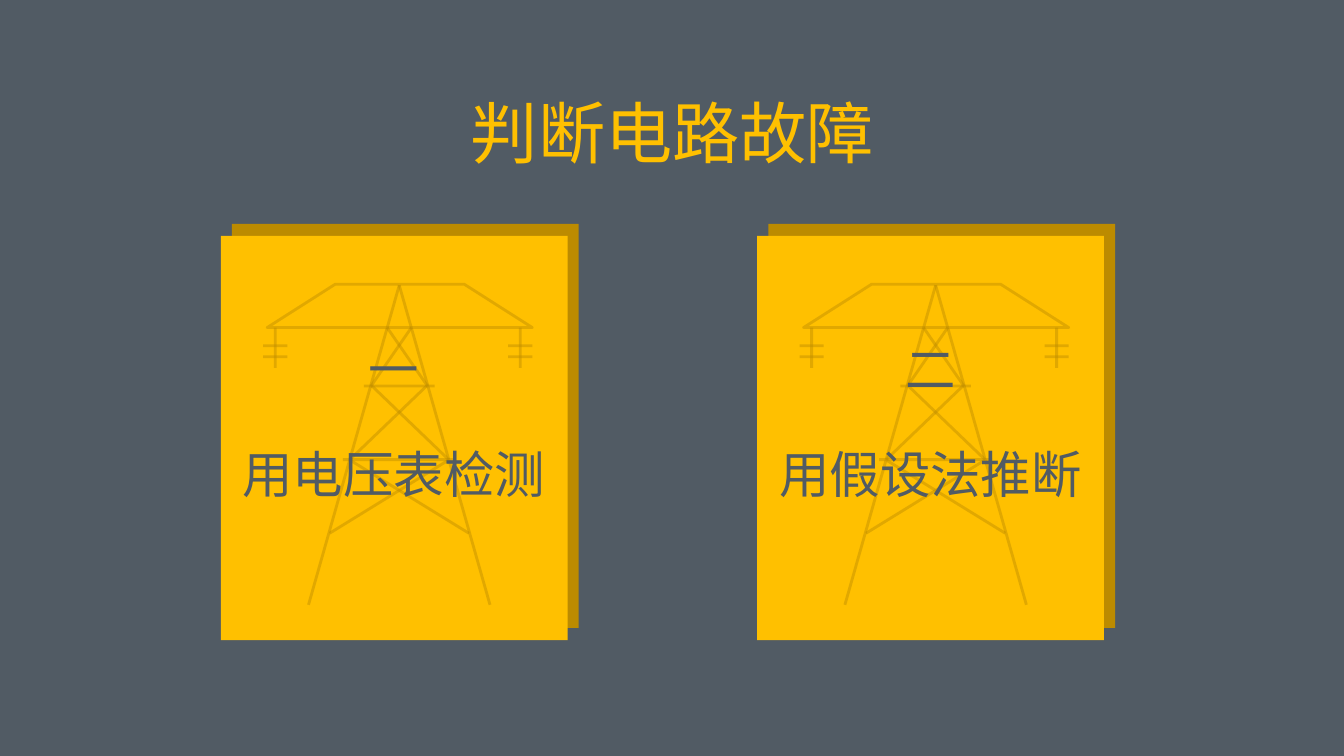
from pptx import Presentation
from pptx.dml.color import RGBColor
from pptx.enum.shapes import MSO_CONNECTOR, MSO_SHAPE
from pptx.enum.text import MSO_ANCHOR, MSO_AUTO_SIZE, PP_ALIGN
from pptx.oxml.ns import qn
from pptx.util import Inches, Pt
from lxml.etree import SubElement

# Content: card left edge, text box left and width, lines
TITLE = "判断电路故障"
CARDS = [
    (2.19, 1.78, 3.92, ["一", "用电压表检测"]),
    (7.51, 7.28, 3.57, ["二", "用假设法推断"]),
]

THEME = {
    "back": "515B64", "gold": "FFC000", "dark": "BC8B00",
    "head": 48, "body": 36, "line": 2, "alpha": 43000,
    "head_font": "Noto Sans CJK JP", "body_font": "Noto Sans CJK SC",
}

# Card and tower geometry in inches; x is measured from the mast
TOP, WIDE, HIGH = 2.34, 3.44, 4.01
SHIFT = (0.11, -0.12)
MAST = 1.77
PAIRS = [  # each line is also drawn mirrored about the mast
    (0, 2.83, 0.9, 6),
    (-0.12, 3.25, 0.28, 3.83),
    (-0.27, 3.83, 0.49, 4.56),
    (-0.48, 4.57, 0.69, 5.29),
]
BARS = [(0.35, 3.83), (0.56, 4.56)]  # half width, height
HANGERS = [-1.23, 1.2]
HALF = 0.12


def color(name):
    return RGBColor.from_string(THEME[name])


def fade(shape):
    shape.line.color.rgb = color("dark")
    shape.line.width = Pt(THEME["line"])
    tint = shape._element.spPr.find(qn("a:ln")).find(".//" + qn("a:srgbClr"))
    SubElement(tint, qn("a:alpha")).set("val", str(THEME["alpha"]))


def write(frame, lines, size, font, ink, indent=0, space=0, gap=1.0):
    frame.word_wrap = True
    frame.auto_size = MSO_AUTO_SIZE.NONE
    frame.vertical_anchor = MSO_ANCHOR.TOP
    for i, line in enumerate(lines):
        para = frame.add_paragraph() if i else frame.paragraphs[0]
        para.alignment = PP_ALIGN.CENTER
        para.line_spacing = gap
        para.space_before = para.space_after = Pt(space)
        para._p.get_or_add_pPr().set("indent", str(Inches(indent)))
        run = para.add_run()
        run.text = line
        run.font.size = Pt(THEME[size])
        run.font.name = THEME[font]
        run.font.color.rgb = color(ink)
        SubElement(run._r.rPr, qn("a:ea")).set("typeface", THEME[font])


def panel(group, left, top, fill):
    box = group.shapes.add_shape(MSO_SHAPE.RECTANGLE, Inches(left), Inches(top),
                                 Inches(WIDE), Inches(HIGH))
    box.shadow.inherit = False
    box.fill.solid()
    box.fill.fore_color.rgb = color(fill)
    box.line.fill.background()


def strut(group, x1, y1, x2, y2):
    line = group.shapes.add_connector(
        MSO_CONNECTOR.STRAIGHT, Inches(x1), Inches(y1), Inches(x2), Inches(y2))
    fade(line)
    SubElement(line._element.spPr, qn("a:effectLst"))


def tower(group, mid):
    # Cross arm
    arm = group.shapes.add_shape(MSO_SHAPE.TRAPEZOID, Inches(mid - 1.31),
                                 Inches(2.82), Inches(2.63), Inches(0.43))
    arm.adjustments[0] = 1.57
    arm.fill.background()
    fade(arm)
    arm.shadow.inherit = False
    # Legs, braces and bars
    for x1, y1, x2, y2 in PAIRS:
        for side in (-1, 1):
            strut(group, mid + side * x1, y1, mid + side * x2, y2)
    for half, y in BARS:
        strut(group, mid - half, y, mid + half, y)
    # Insulators
    for dx in HANGERS:
        x = mid + dx
        strut(group, x, 3.25, x, 3.65)
        for y in (3.43, 3.54):
            strut(group, x - HALF, y, x + HALF, y)


def main():
    deck = Presentation()
    deck.slide_width, deck.slide_height = Inches(13.33), Inches(7.5)
    slide = deck.slides.add_slide(deck.slide_layouts[5])
    slide.background.fill.solid()
    slide.background.fill.fore_color.rgb = color("back")

    # Title
    head = slide.shapes.title
    head.left, head.top = Inches(4.46), Inches(0.86)
    head.width, head.height = Inches(4.42), Inches(0.91)
    write(head.text_frame, [TITLE], "head", "head_font", "gold")

    # Cards
    for left, text_left, text_wide, lines in CARDS:
        group = slide.shapes.add_group_shape()
        panel(group, left + SHIFT[0], TOP + SHIFT[1], "dark")
        panel(group, left, TOP, "gold")
        tower(group, left + MAST)
        box = slide.shapes.add_textbox(Inches(text_left), Inches(3.01),
                                       Inches(text_wide), Inches(1.92))
        write(box.text_frame, lines, "body", "body_font", "back",
              indent=0.33, space=5, gap=1.5)

    deck.save("out.pptx")


if __name__ == "__main__":
    main()
